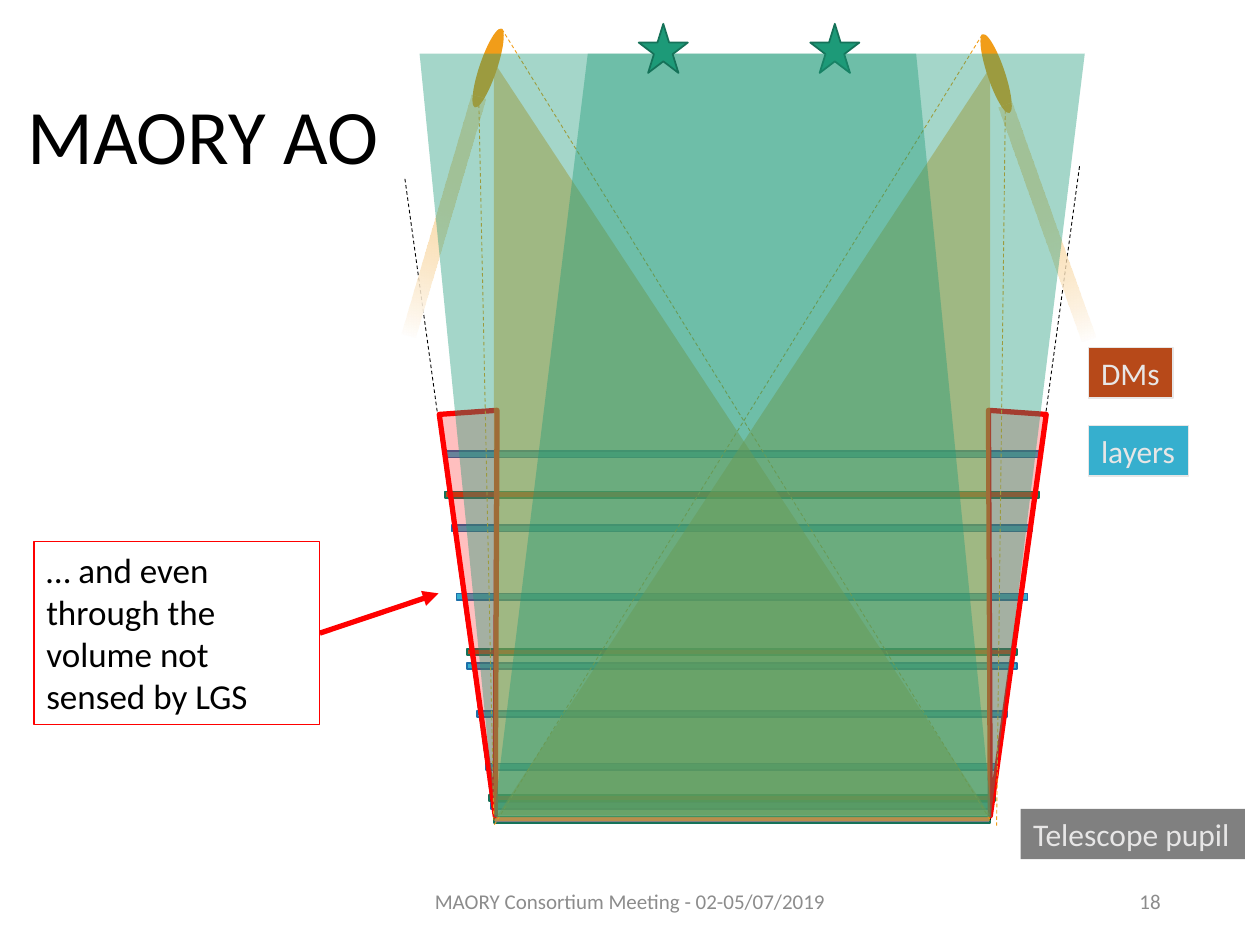
from collections import namedtuple

from pptx import Presentation
from pptx.dml.color import RGBColor
from pptx.enum.dml import MSO_LINE
from pptx.enum.shapes import MSO_CONNECTOR, MSO_SHAPE
from pptx.enum.text import MSO_ANCHOR, PP_ALIGN
from pptx.oxml.ns import qn
from pptx.util import Pt
from lxml import etree

RECTANGLE = MSO_SHAPE.RECTANGLE
TRIANGLE = MSO_SHAPE.ISOSCELES_TRIANGLE
PARALLELOGRAM = MSO_SHAPE.PARALLELOGRAM
STAR = MSO_SHAPE.STAR_5_POINT
OVAL = MSO_SHAPE.OVAL
STRAIGHT = MSO_CONNECTOR.STRAIGHT
DASH = MSO_LINE.DASH
TOP, MIDDLE = MSO_ANCHOR.TOP, MSO_ANCHOR.MIDDLE
LEFT, CENTER, RIGHT = PP_ALIGN.LEFT, PP_ALIGN.CENTER, PP_ALIGN.RIGHT

BLACK = RGBColor(0x00, 0x00, 0x00)
WHITE = RGBColor(0xFF, 0xFF, 0xFF)
RED = RGBColor(0xFF, 0x00, 0x00)
ORANGE = RGBColor(0xF1, 0x9D, 0x19)
GREEN = RGBColor(0x1D, 0x9A, 0x78)
DARK_GREEN = RGBColor(0x15, 0x72, 0x59)
BLUE = RGBColor(0x36, 0xAF, 0xCE)
DARK_BLUE = RGBColor(0x1D, 0x6F, 0xA9)
RUST = RGBColor(0xB7, 0x49, 0x19)
GRAY = RGBColor(0x80, 0x80, 0x80)
FOOTER_GRAY = RGBColor(0x8C, 0x8C, 0x8C)
PALE_GRAY = RGBColor(0xE7, 0xE6, 0xE6)

Box = namedtuple("Box", "left top width height")
VOLUME = Box(282.2, 30.6, 283.7, 436.3)
BAR_HEIGHT = 3.6
LAYERS = [(428, 286.6), (375.5, 303.1), (348.1, 314.6), (269.6, 331.9),
          (227.2, 339.8), (308.5, 326.2), (405.7, 292.3)]
MIRRORS = [(340.2, 314.6), (423.7, 289.4), (250.2, 339.8)]
PUPIL = [(436, 283.7)]


def points(values):
    """Convert numbers to point lengths."""
    return [Pt(value) for value in values]


def set_alpha(parent, percent):
    """Make the first colour below an element partly transparent."""
    color = next(parent.iter(qn("a:srgbClr")))
    etree.SubElement(color, qn("a:alpha")).set("val", str(percent * 1000))


def add_figure(slide, kind, box, fill, line=None, width=1, alpha=None, adjust=None, rotation=0, flips=""):
    """Add a preset shape with fill, outline, rotation and flips."""
    shape = slide.shapes.add_shape(kind, *points(box))
    shape.shadow.inherit = False
    shape.rotation = rotation
    shape.fill.solid()
    shape.fill.fore_color.rgb = fill
    if alpha is not None:
        set_alpha(shape._element.spPr.find(qn("a:solidFill")), alpha)
    if line is None:
        shape.line.fill.background()
    else:
        shape.line.color.rgb = line
        shape.line.width = Pt(width)
    if adjust is not None:
        shape.adjustments[0] = adjust
    for flip in flips:
        shape._element.spPr.xfrm.set("flip" + flip, "1")
    return shape


def add_line(slide, start, end, color, width=0.5, dash=DASH):
    """Add a straight connector between two points."""
    connector = slide.shapes.add_connector(STRAIGHT, *points(start + end))
    connector.line.color.rgb = color
    connector.line.width = Pt(width)
    connector.line.dash_style = dash
    etree.SubElement(connector._element.spPr, qn("a:effectLst"))
    return connector


def add_text(slide, box, text, size, color, fill=None, line=None, align=LEFT, anchor=MIDDLE, wrap=True):
    """Add a one-paragraph text box and return it."""
    shape = slide.shapes.add_textbox(*points(box))
    if fill is not None:
        shape.fill.solid()
        shape.fill.fore_color.rgb = fill
    if line is not None:
        shape.line.color.rgb = line
        shape.line.width = Pt(0.75)
    frame = shape.text_frame
    frame.word_wrap = wrap
    frame.vertical_anchor = anchor
    paragraph = frame.paragraphs[0]
    paragraph.text = text
    paragraph.alignment = align
    paragraph.font.name = "Calibri"
    paragraph.font.size = Pt(size)
    paragraph.font.color.rgb = color
    return shape


def place_bars(slide, box, bars, fill, line):
    """Place thin bars centred across the volume."""
    for offset, width in bars:
        left = box.left + (box.width - width) / 2
        add_figure(slide, RECTANGLE, Box(left, box.top + offset, width, BAR_HEIGHT), fill, line)


def place_field_edges(slide, box):
    """Place the dashed edges of the field of view."""
    right, bottom = box.left + box.width, box.top + 438
    add_line(slide, (box.left, bottom), (box.left - 51, box.top + 70.2), BLACK)
    add_line(slide, (right, bottom), (right + 51, box.top + 64.4), BLACK)


def place_legend(slide, box):
    """Place the labels for layers, mirrors and pupil."""
    left, top = box.left, box.top
    labels = [("layers", Box(left, top + 44.6, 56.9, 28.8), BLUE, PALE_GRAY),
              ("DMs", Box(left, top, 48.2, 28.8), RUST, PALE_GRAY),
              ("Telescope pupil", Box(left - 38.9, top + 263.5, 128.2, 28.8), GRAY, None)]
    for text, label_box, fill, line in labels:
        add_text(slide, label_box, text, 18, PALE_GRAY, fill, line, anchor=TOP, wrap=False)


def place_callout(slide, box):
    """Place the framed remark and its arrow."""
    remark = add_text(slide, box, "… and even through the volume not sensed by LGS",
                      20, BLACK, line=RED, anchor=TOP)
    right = box.left + box.width
    arrow = add_line(slide, (right, box.top + box.height / 2), (right + 67.8, box.top + 29.5), RED, 3, None)
    arrow.begin_connect(remark, 3)
    etree.SubElement(arrow.line._get_or_add_ln(), qn("a:tailEnd")).set("type", "triangle")


def place_unsensed_wedges(slide, box):
    """Place the red wedges at both sides of the volume."""
    width = 33.1
    for left, rotation, flips in ((box.left - 23, -4.1, "V"),
                                  (box.left + box.width + 23.8 - width, 4.1, "HV")):
        add_figure(slide, TRIANGLE, Box(left, box.top + 204.8, width, 231.1), RED, RED, 3, 25, 0.468, rotation, flips)


def place_laser_star(slide, box, side, spot_tilt, beam_tilt, beam_offset, foot):
    """Place one laser guide star with cone, spot, beam and rays."""
    near, far = box.left, box.left + box.width
    if side > 0:
        near, far = far, near
    top = box.top
    add_figure(slide, TRIANGLE, Box(box.left, top + 4.7, box.width, 430.6), ORANGE,
               alpha=50, adjust=0, flips="H" if side > 0 else "")
    add_figure(slide, OVAL, Box(near + side * 3.3 - 5, top - 15.5, 10, 47.5), ORANGE, rotation=spot_tilt)
    beam_box = Box(near + side * beam_offset - 4.3, top + 22, 8.6, 141.8)
    beam = add_figure(slide, RECTANGLE, beam_box, ORANGE, rotation=beam_tilt)
    beam.fill.gradient()
    beam.fill.gradient_angle = 270
    for stop, color in zip(beam.fill.gradient_stops, (ORANGE, WHITE)):
        stop.color.rgb = color
    set_alpha(beam._element.spPr.find(qn("a:gradFill")), 30)
    add_line(slide, (near + side * 8.6, top + 25.5), (near + side * foot, top + 438), ORANGE)
    add_line(slide, (near - side * 4.6, top - 14), (far, top + 438), ORANGE)


def place_natural_stars(slide, box):
    """Place the two natural guide stars and their beams."""
    for left, width, adjust, flips, star_left in ((0, 337.7, 0.159, "", 180.8),
                                                  (-42.4, 326.9, 0.132, "H", 82.8)):
        add_figure(slide, PARALLELOGRAM, Box(box.left + left, box.top, width, box.height),
                   GREEN, alpha=40, adjust=adjust, flips=flips)
        add_figure(slide, STAR, Box(box.left + star_left, box.top - 17, 28.1, 28.1), GREEN, DARK_GREEN)


def place_title_and_footer(slide, box):
    """Place the title, meeting name and slide number."""
    title = add_text(slide, Box(box.left + 8.6, box.top + 27.4, 620.6, 104.4), "MAORY AO", 44, BLACK)
    title.text_frame.paragraphs[0].line_spacing = 0.9
    for left, width, text, align in ((238.3, 243.4, "MAORY Consortium Meeting - 02-05/07/2019", CENTER),
                                     (508.3, 162, "18", RIGHT)):
        add_text(slide, Box(box.left + left, box.top + 500.4, width, 28.8), text, 12, FOOTER_GRAY, align=align)


def main():
    """Build and save the slide."""
    presentation = Presentation()
    presentation.slide_width, presentation.slide_height = Pt(720), Pt(540)
    slide = presentation.slides.add_slide(presentation.slide_layouts[6])
    place_bars(slide, VOLUME, LAYERS, BLUE, DARK_BLUE)
    place_bars(slide, VOLUME, MIRRORS, RUST, DARK_GREEN)
    place_bars(slide, VOLUME, PUPIL, GRAY, DARK_GREEN)
    place_field_edges(slide, VOLUME)
    place_legend(slide, Box(622.1, 198.7, 89.3, 292.3))
    place_title_and_footer(slide, Box(0, 0, 720, 540))
    place_callout(slide, Box(19.4, 309.6, 163.4, 104.4))
    place_unsensed_wedges(slide, VOLUME)
    place_laser_star(slide, VOLUME, -1, 18.6, 16.5, 28.8, 0)
    place_laser_star(slide, VOLUME._replace(top=VOLUME.top + 3.2), 1, -18.6, -19.6, 32.4, 3.6)
    place_natural_stars(slide, VOLUME)
    presentation.save("out.pptx")


if __name__ == "__main__":
    main()
